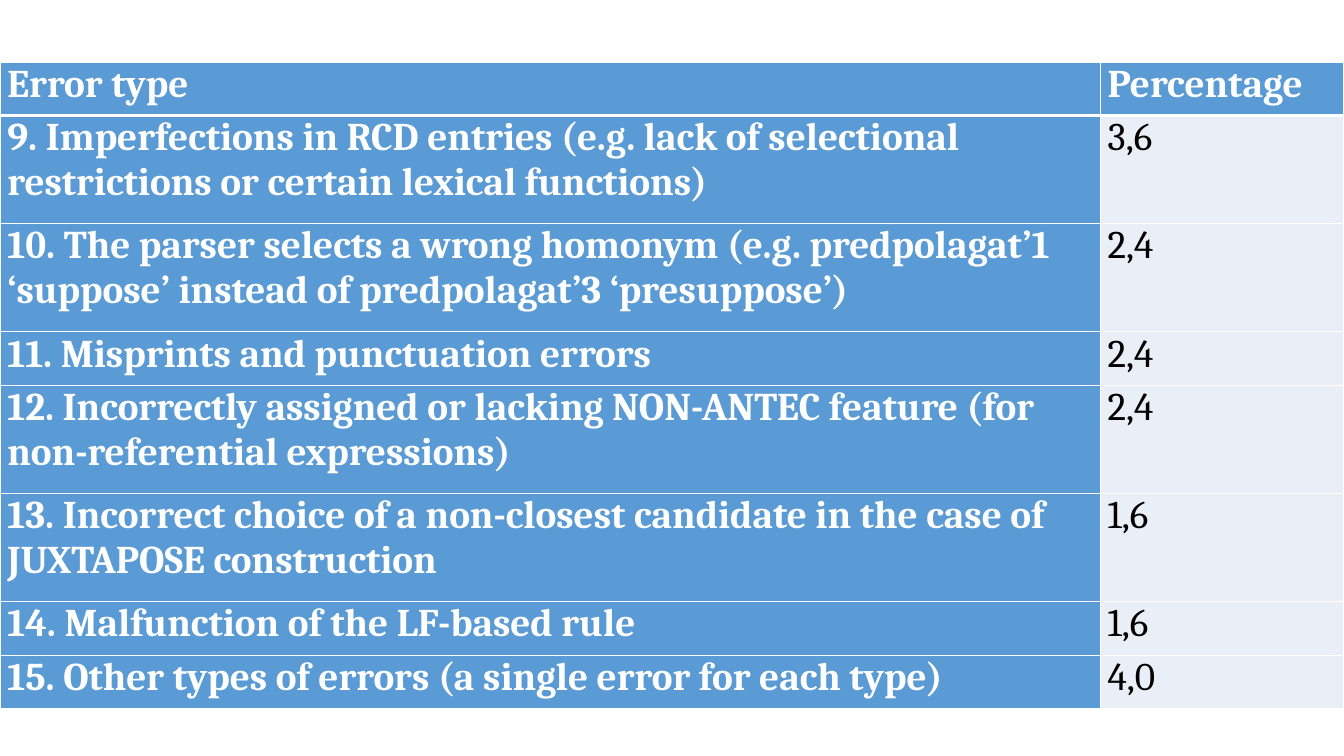
from lxml import etree
from pptx import Presentation
from pptx.dml.color import RGBColor
from pptx.oxml.ns import qn
from pptx.util import Pt

PX = 9525
BLANK_LAYOUT = 6
COLORS = {"blue": "5B9BD5", "pale": "EAEFF7", "white": "FFFFFF", "black": "000000"}
LABEL = {"size": Pt(28), "name": "Cambria", "bold": True}
VALUE = {**LABEL, "bold": False}
INSETS = {"margin_left": 7 * PX, "margin_right": 7 * PX, "margin_top": 0, "margin_bottom": 0}
COLUMN_WIDTHS = (1048, 232)
SINGLE, DOUBLE = 51, 103
HEADER_RULE, GRID_RULE = 3, 1

ROWS = [
    ("Error type", "Percentage", SINGLE),
    ("9. Imperfections in RCD entries (e.g. lack of selectional restrictions "
     "or certain lexical functions)", "3,6", DOUBLE),
    ("10. The parser selects a wrong homonym (e.g. predpolagat’1 ‘suppose’ "
     "instead of predpolagat’3 ‘presuppose’)", "2,4", DOUBLE),
    ("11. Misprints and punctuation errors", "2,4", SINGLE),
    ("12. Incorrectly assigned or lacking NON-ANTEC feature "
     "(for non-referential expressions)", "2,4", DOUBLE),
    ("13. Incorrect choice of a non-closest candidate in the case of "
     "JUXTAPOSE construction", "1,6", DOUBLE),
    ("14. Malfunction of the LF-based rule", "1,6", SINGLE),
    ("15. Other types of errors (a single error for each type)", "4,0", SINGLE),
]


def rgb(name):
    """Return the named colour."""
    return RGBColor.from_string(COLORS[name])


def set_attrs(target, values):
    """Set each attribute of a target from a dict."""
    for key, value in values.items():
        setattr(target, key, value)


def set_borders(cell, top, bottom):
    """Draw white borders, with top and bottom widths in points."""
    tc_pr = cell._tc.get_or_add_tcPr()
    widths = {"a:lnL": GRID_RULE, "a:lnR": GRID_RULE, "a:lnT": top, "a:lnB": bottom}
    for i, (tag, width) in enumerate(widths.items()):
        ln = etree.Element(qn(tag), w=str(Pt(width)))
        fill = etree.SubElement(ln, qn("a:solidFill"))
        etree.SubElement(fill, qn("a:srgbClr"), val=COLORS["white"])
        tc_pr.insert(i, ln)


def write_cell(cell, text, fill, color, font):
    """Fill a cell and write its text."""
    set_attrs(cell, INSETS)
    cell.fill.solid()
    cell.fill.fore_color.rgb = rgb(fill)
    r = cell.text_frame.paragraphs[0].add_run()
    r.text = text
    set_attrs(r.font, font)
    r.font.color.rgb = rgb(color)


def add_error_table(s, left, top):
    """Add the table of error types and their percentages."""
    height = sum(row[-1] for row in ROWS)
    frame = s.shapes.add_table(len(ROWS), len(COLUMN_WIDTHS), left * PX, top * PX,
                               sum(COLUMN_WIDTHS) * PX, height * PX)
    table = frame.table
    for column, width in zip(table.columns, COLUMN_WIDTHS):
        column.width = width * PX
    for i, (label, value, row_height) in enumerate(ROWS):
        table.rows[i].height = row_height * PX
        value_style = ("pale", "black", VALUE) if i else ("blue", "white", LABEL)
        write_cell(table.cell(i, 0), label, "blue", "white", LABEL)
        write_cell(table.cell(i, 1), value, *value_style)
        for cell in table.rows[i].cells:
            set_borders(cell, HEADER_RULE if i == 1 else GRID_RULE,
                        HEADER_RULE if i == 0 else GRID_RULE)


def main():
    """Build the slide and save it."""
    prs = Presentation()
    prs.slide_width, prs.slide_height = 1280 * PX, 720 * PX
    s = prs.slides.add_slide(prs.slide_layouts[BLANK_LAYOUT])
    add_error_table(s, 0, 59)
    prs.save("out.pptx")


if __name__ == "__main__":
    main()
